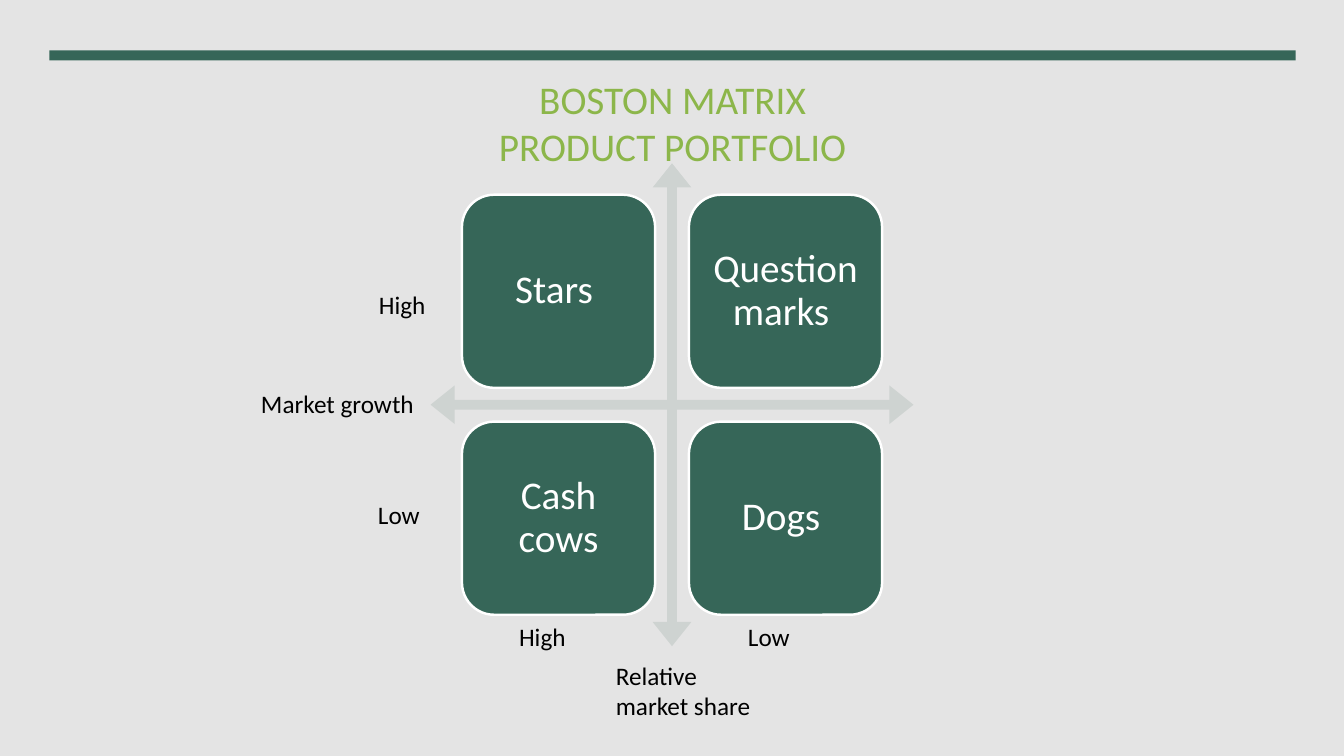
"""Build a Boston matrix slide: four product tiles around crossed axes."""
from pptx import Presentation
from pptx.dml.color import RGBColor
from pptx.enum.shapes import MSO_SHAPE
from pptx.enum.text import MSO_ANCHOR, MSO_AUTO_SIZE, PP_ALIGN
from pptx.util import Inches, Pt

RECTANGLE, TILE, AXES = MSO_SHAPE.RECTANGLE, MSO_SHAPE.ROUNDED_RECTANGLE, MSO_SHAPE.QUAD_ARROW
TOP, MIDDLE = MSO_ANCHOR.TOP, MSO_ANCHOR.MIDDLE
LEFT, CENTER = PP_ALIGN.LEFT, PP_ALIGN.CENTER
FIXED = MSO_AUTO_SIZE.NONE

COLORS = {
    "background": "E4E4E4",
    "green": "366658",
    "title": "8CB64A",
    "axes": "CED3D1",
    "white": "FFFFFF",
    "black": "000000",
}
FONT = "Calibri"
WIDTH, HEIGHT = 13.33, 7.5
MATRIX = 4.79
MATRIX_LEFT, MATRIX_TOP = (WIDTH - MATRIX) / 2, 1.62
TILE_SIZE = 0.4 * MATRIX
TILE_PITCH = 0.47 * MATRIX
TILE_MARGIN = 0.065 * MATRIX

PRODUCTS = [["Stars ", "Question marks "], ["Cash cows", "Dogs "]]
LABELS = [
    ("Relative\nmarket share", 6.01, 6.5, 1.6, 0.71),
    ("Market growth", 2.49, 3.8, 2.69, 0.49),
    ("High", 3.66, 2.82, 1.34, 0.49),
    ("Low", 3.65, 4.9, 1.08, 0.49),
    ("High", 5.05, 6.11, 1.34, 0.49),
    ("Low", 7.32, 6.11, 1.08, 0.49),
]


def color(name):
    """Return the named colour."""
    return RGBColor.from_string(COLORS[name])


def write(frame, text, size, ink, align, anchor):
    """Fill a text frame and format all its runs alike."""
    frame.text = text
    frame.word_wrap = True
    frame.auto_size = FIXED
    frame.vertical_anchor = anchor
    for paragraph in frame.paragraphs:
        paragraph.alignment = align
        for run in paragraph.runs:
            run.font.name = FONT
            run.font.size = Pt(size)
            run.font.color.rgb = color(ink)


def add_block(slide, kind, fill, left, top, width, height):
    """Add a flat preset shape without outline."""
    block = slide.shapes.add_shape(kind, *map(Inches, (left, top, width, height)))
    block.shadow.inherit = False
    block.fill.solid()
    block.fill.fore_color.rgb = color(fill)
    block.line.fill.background()
    return block


def add_title(slide):
    """Place and format the title placeholder."""
    title = slide.shapes.title
    title.left, title.top = Inches(0.64), Inches(0.7)
    title.width, title.height = Inches(12.06), Inches(1.2)
    write(title.text_frame, "BOSTON MATRIX\vPRODUCT PORTFOLIO", 28, "title", CENTER, TOP)


def add_axes(slide):
    """Add the four-headed arrow behind the tiles."""
    axes = add_block(slide, AXES, "axes", MATRIX_LEFT, MATRIX_TOP, MATRIX, MATRIX)
    for index, share in enumerate((0.02, 0.04, 0.05)):
        axes.adjustments[index] = share


def add_tile(slide, product, column, row):
    """Add one product tile at its column and row."""
    left = MATRIX_LEFT + TILE_MARGIN + column * TILE_PITCH
    top = MATRIX_TOP + TILE_MARGIN + row * TILE_PITCH
    tile = add_block(slide, TILE, "green", left, top, TILE_SIZE, TILE_SIZE)
    tile.line.color.rgb = color("white")
    tile.line.width = Pt(1.75)
    frame = tile.text_frame
    frame.margin_left = frame.margin_right = Inches(0.12)
    frame.margin_top = frame.margin_bottom = Inches(0.12)
    write(frame, product, 28, "white", CENTER, MIDDLE)
    frame.paragraphs[0].line_spacing = 0.9


def add_label(slide, text, left, top, width, height):
    """Add an axis label."""
    label = slide.shapes.add_textbox(*map(Inches, (left, top, width, height)))
    write(label.text_frame, text, 18, "black", LEFT, TOP)


def main():
    """Build and save the slide."""
    deck = Presentation()
    deck.slide_width, deck.slide_height = Inches(WIDTH), Inches(HEIGHT)
    slide = deck.slides.add_slide(deck.slide_layouts[5])
    slide.background.fill.solid()
    slide.background.fill.fore_color.rgb = color("background")
    add_title(slide)
    add_block(slide, RECTANGLE, "green", 0.49, 0.5, 12.36, 0.1)
    add_axes(slide)
    for row, products in enumerate(PRODUCTS):
        for column, product in enumerate(products):
            add_tile(slide, product, column, row)
    for label in LABELS:
        add_label(slide, *label)
    deck.save("out.pptx")


if __name__ == "__main__":
    main()
